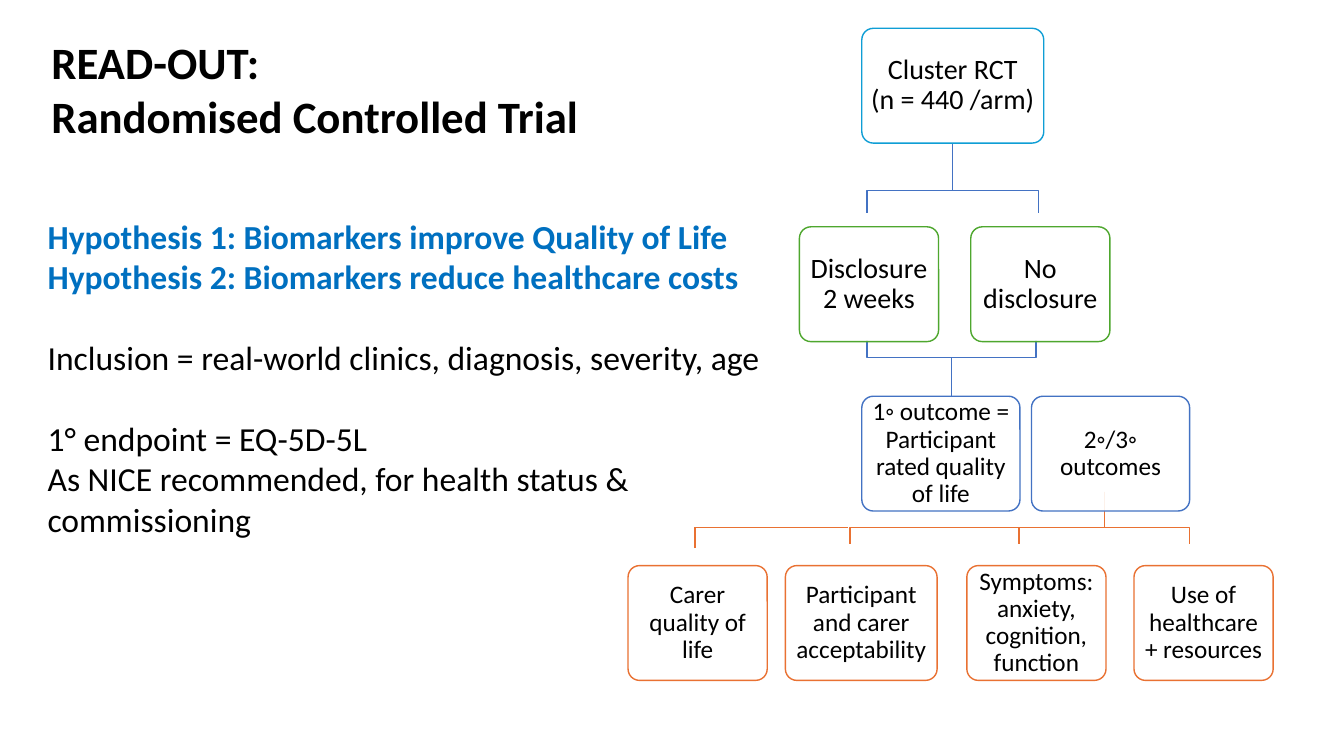
"""Build a slide on a randomised controlled trial with its outcome tree."""
from lxml.etree import SubElement
from pptx import Presentation
from pptx.dml.color import RGBColor
from pptx.enum.shapes import MSO_CONNECTOR, MSO_SHAPE
from pptx.enum.text import MSO_ANCHOR, MSO_AUTO_SIZE, PP_ALIGN
from pptx.oxml.ns import qn
from pptx.util import Pt


def tint(code):
    return RGBColor.from_string(code)


def write(para, text, size, color="000000", bold=False, align=PP_ALIGN.LEFT, lead=1.0, gap=0):
    para.text = text
    props = para._p.get_or_add_pPr()
    props.set("marL", "0")
    props.set("indent", "0")
    SubElement(props, qn("a:buNone"))
    para.alignment = align
    para.line_spacing = lead
    para.space_before = Pt(gap)
    para.space_after = Pt(0)
    for run in para.runs:
        run.font.name = "Calibri"
        run.font.size = Pt(size)
        run.font.bold = bold
        run.font.color.rgb = tint(color)


BLUE, GREEN, ORANGE, CYAN = "4372C3", "4EA72E", "E97132", "0F9ED5"

deck = Presentation()
deck.slide_width, deck.slide_height = Pt(960), Pt(540)
slide = deck.slides.add_slide(deck.slide_layouts[1])
shapes = slide.shapes

trees = [
    (789, 351.4, 376.6, 388.8, (849.6, 728, 607), ORANGE),
    (679.7, 283.7, 255.6, 242.6, (740, 619.2), BLUE),
    (680.4, 102.2, 136, 152, (741.6, 619.2), BLUE),
]
for stem, start, bar, end, drops, color in trees:
    for drop in drops:
        pen = shapes.build_freeform(Pt(stem), Pt(start))
        pen.add_line_segments(
            [(Pt(stem), Pt(bar)), (Pt(drop), Pt(bar)), (Pt(drop), Pt(end))], close=False)
        branch = pen.convert_to_shape()
        branch.shadow.inherit = False
        branch.fill.background()
        branch.line.color.rgb = tint(color)
        branch.line.width = Pt(1)

rows = [
    (20.2, 20, CYAN, [(615.6, 130, "Cluster RCT\n(n = 440 /arm)")]),
    (162, 20, GREEN, [(571, 99.4, "Disclosure 2 weeks"), (693.4, 99.4, "No disclosure")]),
    (283, 18, BLUE, [
        (615.6, 113, "1◦ outcome = Participant rated quality of life"),
        (736.8, 113, "2◦/3◦\noutcomes")]),
    (404, 18, ORANGE, [
        (448.6, 99.4, "Carer quality of life"),
        (561, 108.4, "Participant and carer acceptability"),
        (690.6, 99.4, "Symptoms: anxiety, cognition, function"),
        (810, 99.4, "Use of healthcare + resources")]),
]
for top, size, color, cells in rows:
    for left, width, text in cells:
        box = shapes.add_shape(
            MSO_SHAPE.ROUNDED_RECTANGLE, Pt(left), Pt(top), Pt(width), Pt(82))
        box.adjustments[0] = 0.1
        box.shadow.inherit = False
        box.fill.solid()
        box.fill.fore_color.rgb = tint("FFFFFF")
        shade = box.fill._xPr.find(qn("a:solidFill"))[0]
        SubElement(shade, qn("a:alpha")).set("val", "90000")
        box.line.color.rgb = tint(color)
        box.line.width = Pt(1)
        frame = box.text_frame
        frame.word_wrap = True
        frame.vertical_anchor = MSO_ANCHOR.MIDDLE
        frame.margin_left = frame.margin_right = Pt(2)
        frame.margin_top = frame.margin_bottom = Pt(2)
        for rank, line in enumerate(text.split("\n")):
            para = frame.add_paragraph() if rank else frame.paragraphs[0]
            write(para, line, size, align=PP_ALIGN.CENTER, lead=0.9)

for left, top, right, end in [(605.5, 376.6, 496.5, 376.6), (496.5, 391.6, 496.5, 376.6)]:
    link = shapes.add_connector(MSO_CONNECTOR.STRAIGHT, Pt(left), Pt(top), Pt(right), Pt(end))
    link.line.color.rgb = tint(ORANGE)
    link.line.width = Pt(1)
    SubElement(link._element.spPr, qn("a:effectLst"))

title, body = shapes.title, slide.placeholders[1]
bold = {"size": 24, "color": "0070C0", "bold": True}
blocks = [
    (title, (29.5, 21, 487, 85), [
        ("READ-OUT:", {"size": 32, "bold": True}),
        ("Randomised Controlled Trial", {"size": 32, "bold": True})]),
    (body, (26.8, 150.5, 536, 264), [
        ("Hypothesis 1: Biomarkers improve Quality of Life", bold),
        ("Hypothesis 2: Biomarkers reduce healthcare costs", bold),
        ("Inclusion = real-world clinics, diagnosis, severity, age", {"size": 24, "gap": 29}),
        ("1° endpoint = EQ-5D-5L", {"size": 24, "gap": 29}),
        ("As NICE recommended, for health status & commissioning", {"size": 24})]),
]
for holder, (left, top, width, height), lines in blocks:
    holder.left, holder.top = Pt(left), Pt(top)
    holder.width, holder.height = Pt(width), Pt(height)
    frame = holder.text_frame
    frame.word_wrap = True
    frame.auto_size = MSO_AUTO_SIZE.NONE
    frame.vertical_anchor = MSO_ANCHOR.TOP
    for rank, (text, style) in enumerate(lines):
        para = frame.add_paragraph() if rank else frame.paragraphs[0]
        write(para, text, **style)

deck.save("out.pptx")
